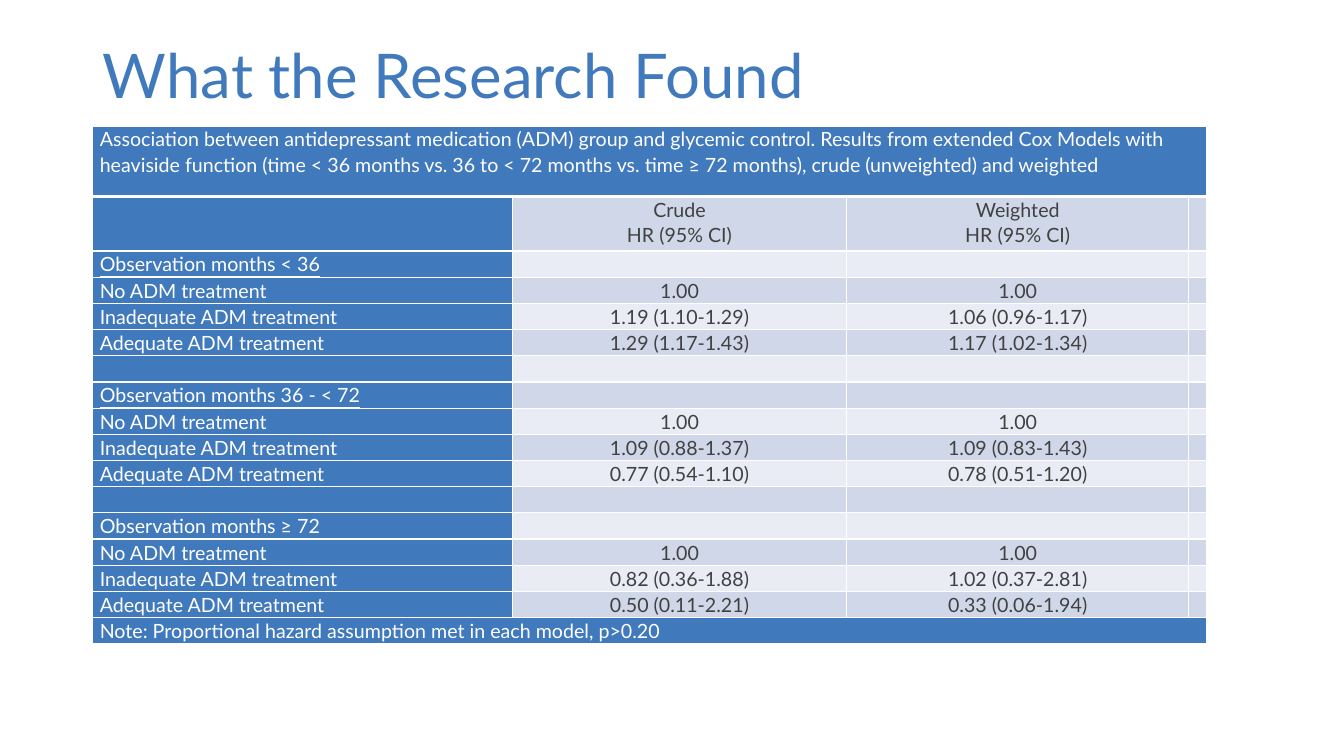
from dataclasses import dataclass

import pptx
import pptx.dml.color
import pptx.enum.text
import pptx.oxml
import pptx.oxml.ns
import pptx.util

Inches = pptx.util.Inches
Align = pptx.enum.text.PP_ALIGN


@dataclass(frozen=True)
class Theme:
    font: str = "Lato"
    blue: str = "4179BD"
    white: str = "FFFFFF"
    dark: str = "414141"
    bands: tuple = ("E9ECF4", "CFD7E8")
    title_size: int = 44
    table_size: int = 14


THEME = Theme()

TITLE = "What the Research Found"
CAPTION = (
    "Association between antidepressant medication (ADM) group and glycemic control. "
    "Results from extended Cox Models with heaviside function (time < 36 months vs. "
    "36 to < 72 months vs. time ≥ 72 months), crude (unweighted) and weighted"
)
HEADINGS = ("", "Crude\nHR (95% CI)", "Weighted\nHR (95% CI)")
NOTE = "Note: Proportional hazard assumption met in each model, p>0.20"
TREATMENTS = ("No ADM treatment", "Inadequate ADM treatment", "Adequate ADM treatment")
HAZARD_RATIOS = {
    "Observation months < 36": (
        ("1.00", "1.00"),
        ("1.19 (1.10-1.29)", "1.06 (0.96-1.17)"),
        ("1.29 (1.17-1.43)", "1.17 (1.02-1.34)"),
    ),
    "Observation months 36 - < 72": (
        ("1.00", "1.00"),
        ("1.09 (0.88-1.37)", "1.09 (0.83-1.43)"),
        ("0.77 (0.54-1.10)", "0.78 (0.51-1.20)"),
    ),
    "Observation months ≥ 72": (
        ("1.00", "1.00"),
        ("0.82 (0.36-1.88)", "1.02 (0.37-2.81)"),
        ("0.50 (0.11-2.21)", "0.33 (0.06-1.94)"),
    ),
}
COLUMN_WIDTHS = (4.16, 3.32, 3.39, 0.12)
CAPTION_HEIGHT, HEADING_HEIGHT, ROW_HEIGHT = 0.7, 0.54, 0.26


def rgb(colour):
    return pptx.dml.color.RGBColor.from_string(colour)


def format_paragraph(paragraph, size, colour, alignment, spacing):
    paragraph.alignment = alignment
    paragraph.line_spacing = spacing
    paragraph.font.name = THEME.font
    paragraph.font.size = pptx.util.Pt(size)
    paragraph.font.color.rgb = rgb(colour)


def set_borders(cell, bottom_width):
    properties = cell._tc.get_or_add_tcPr()
    for side, width in (("L", 1), ("R", 1), ("T", 1), ("B", bottom_width)):
        properties.append(pptx.oxml.parse_xml(
            f'<a:ln{side} {pptx.oxml.ns.nsdecls("a")} w="{pptx.util.Pt(width)}">'
            f'<a:solidFill><a:srgbClr val="{THEME.white}"/></a:solidFill></a:ln{side}>'
        ))


def fill_cell(cell, text, background, colour, alignment, bottom_width=1):
    set_borders(cell, bottom_width)
    cell.fill.solid()
    cell.fill.fore_color.rgb = rgb(background)
    cell.margin_left = cell.margin_right = Inches(0.07)
    cell.margin_top = cell.margin_bottom = 0
    cell.text = text
    for paragraph in cell.text_frame.paragraphs:
        format_paragraph(paragraph, THEME.table_size, colour, alignment, 1.07)
        if not text:  # keeps an empty row as low as the others
            paragraph._p.append(pptx.oxml.parse_xml(
                f'<a:endParaRPr {pptx.oxml.ns.nsdecls("a")} sz="{THEME.table_size * 100}"/>'
            ))


def result_rows():
    """Headings, then each observation period, with a blank row between periods."""
    rows = [HEADINGS]
    for period, ratios in HAZARD_RATIOS.items():
        if len(rows) > 1:
            rows.append(("", "", ""))
        rows.append((period, "", ""))
        rows += [(treatment, *pair) for treatment, pair in zip(TREATMENTS, ratios)]
    return rows


def add_title(slide):
    title = slide.shapes.title
    title.left, title.top = Inches(0.92), Inches(0.4)
    title.width, title.height = Inches(11.5), Inches(0.9)
    title.text_frame.text = TITLE
    title.text_frame.vertical_anchor = pptx.enum.text.MSO_ANCHOR.TOP
    format_paragraph(title.text_frame.paragraphs[0], THEME.title_size, THEME.blue, Align.LEFT, 0.9)


def add_full_width_row(table, row, text, bottom_width=1):
    last = len(COLUMN_WIDTHS) - 1
    table.cell(row, 0).merge(table.cell(row, last))
    for column in range(last + 1):
        fill_cell(table.cell(row, column), "" if column else text,
                  THEME.blue, THEME.white, Align.LEFT, bottom_width)


def add_results_table(slide):
    rows = result_rows()
    heights = [CAPTION_HEIGHT, HEADING_HEIGHT] + [ROW_HEIGHT] * len(rows)
    table = slide.shapes.add_table(
        len(heights), len(COLUMN_WIDTHS), Inches(0.92), Inches(1.25),
        Inches(sum(COLUMN_WIDTHS)), Inches(sum(heights)),
    ).table
    table.first_row = table.horz_banding = False
    for column, width in zip(table.columns, COLUMN_WIDTHS):
        column.width = Inches(width)
    for row, height in zip(table.rows, heights):
        row.height = Inches(height)

    add_full_width_row(table, 0, CAPTION, bottom_width=3)
    for index, (label, *values) in enumerate(rows, start=1):
        label_cell = table.cell(index, 0)
        fill_cell(label_cell, label, THEME.blue, THEME.white, Align.LEFT)
        if label in HAZARD_RATIOS:
            label_cell.text_frame.paragraphs[0].font.underline = True
        for column, value in enumerate((*values, ""), start=1):
            fill_cell(table.cell(index, column), value,
                      THEME.bands[index % 2], THEME.dark, Align.CENTER)
    add_full_width_row(table, len(heights) - 1, NOTE)


def main():
    presentation = pptx.Presentation()
    presentation.slide_width = Inches(13.33)
    presentation.slide_height = Inches(7.5)
    slide = presentation.slides.add_slide(presentation.slide_layouts.get_by_name("Title Only"))
    add_title(slide)
    add_results_table(slide)
    presentation.save("out.pptx")


if __name__ == "__main__":
    main()
